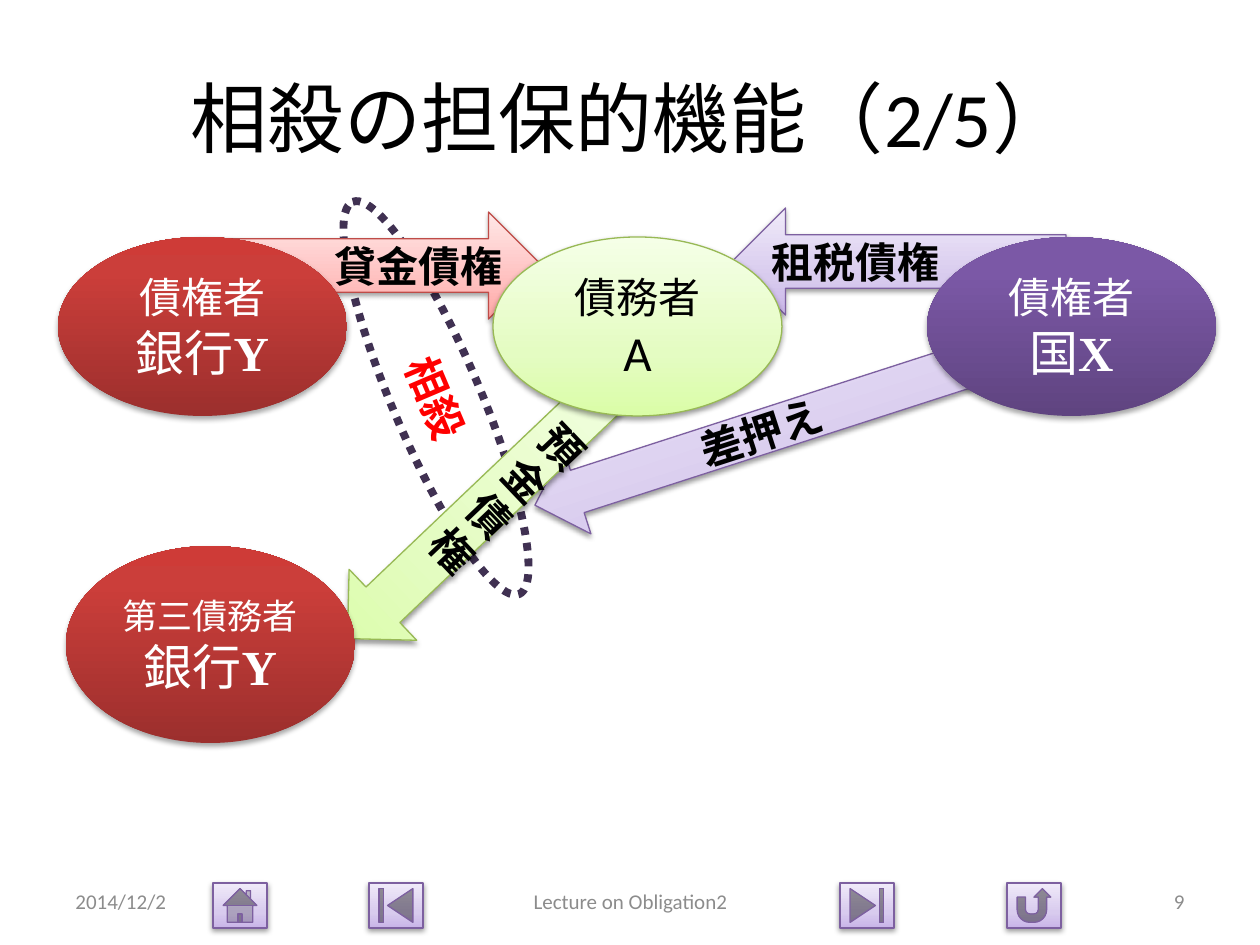
from pptx import Presentation
from pptx import util as u
from pptx.dml.color import RGBColor
from pptx.enum import dml, shapes, text
from pptx.oxml import parse_xml
from pptx.oxml.ns import nsdecls, qn

PX = 914400 / 126
BLACK = RGBColor(0x00, 0x00, 0x00)
WHITE = RGBColor(0xFF, 0xFF, 0xFF)
GREY = RGBColor(0x8C, 0x8C, 0x8C)
RED = RGBColor(0xFF, 0x00, 0x00)
DARK_PURPLE = RGBColor(0x40, 0x31, 0x52)
PURPLE_LINE = RGBColor(0x7D, 0x60, 0xA0)
RED_LINE = RGBColor(0xBF, 0x4C, 0x48)
GREEN_LINE = RGBColor(0x98, 0xB9, 0x55)


def gradient(*stops):
    return [(pos, RGBColor.from_string(color)) for pos, color in stops]


LILAC = gradient((0, "C9B5E8"), (35, "D8CBEE"), (100, "F0EAF9"))
PINK = gradient((0, "FFA6A5"), (35, "FFC0BF"), (100, "FFE7E7"))
GREEN = gradient((0, "DAFDA7"), (35, "E4FCC2"), (100, "F5FFE7"))
CRIMSON = gradient((0, "9C2F2D"), (80, "CB3E3A"), (100, "CE3B37"))
PURPLE = gradient((0, "5F4480"), (80, "7B58A6"), (100, "7C57A8"))

LEFT, CENTER, RIGHT = text.PP_ALIGN.LEFT, text.PP_ALIGN.CENTER, text.PP_ALIGN.RIGHT
KIND = shapes.MSO_SHAPE

prs = Presentation()
prs.slide_width, prs.slide_height = u.Inches(10), u.Inches(7.5)
slide = prs.slides.add_slide(prs.slide_layouts[6])


def add_block(kind, box, stops, line, rotation=0):
    """Add a preset shape with an upward gradient and a soft shadow below it."""
    s = slide.shapes.add_shape(kind, *(round(v * PX) for v in box))
    s.rotation = rotation
    s.shadow.inherit = False
    if line is None:
        s.line.fill.background()
    else:
        s.line.color.rgb = line
        s.line.width = u.Pt(0.75)
    if stops is None:
        s.fill.background()
        return s
    s.fill.gradient()
    spPr = s._element.spPr
    gs = "".join(
        f'<a:gs pos="{pos * 1000}"><a:srgbClr val="{color}"/></a:gs>' for pos, color in stops)
    spPr.replace(spPr.find(qn("a:gradFill")), parse_xml(
        f'<a:gradFill {nsdecls("a")} rotWithShape="1"><a:gsLst>{gs}</a:gsLst>'
        '<a:lin ang="16200000" scaled="0"/></a:gradFill>'))
    alpha, dist = (35, 1.8) if line is None else (38, 1.6)
    spPr.find(qn("a:effectLst")).append(parse_xml(
        f'<a:outerShdw {nsdecls("a")} blurRad="{u.Pt(3.1)}" dist="{u.Pt(dist)}" dir="5400000" '
        f'rotWithShape="0"><a:srgbClr val="{BLACK}"><a:alpha val="{alpha * 1000}"/>'
        '</a:srgbClr></a:outerShdw>'))
    return s


def write(s, lines, color, align=CENTER, bold=False):
    """Fill a shape with (text, size) lines."""
    tf = s.text_frame
    tf.word_wrap = True
    tf.vertical_anchor = text.MSO_ANCHOR.MIDDLE
    for i, (words, size) in enumerate(lines):
        p = tf.add_paragraph() if i else tf.paragraphs[0]
        p.alignment = align
        p.font.name = "Calibri"
        p.font.size = u.Pt(size)
        p.font.bold = bold
        p.font.color.rgb = color
        p.add_run().text = words


# Navigation buttons
for kind, left in ((KIND.ACTION_BUTTON_HOME, 213), (KIND.ACTION_BUTTON_BEGINNING, 369),
                   (KIND.ACTION_BUTTON_END, 840), (KIND.ACTION_BUTTON_RETURN, 1007)):
    add_block(kind, (left, 883, 54, 45), LILAC, PURPLE_LINE)

# Dotted ring around the two claims that are set off
ring = add_block(KIND.OVAL, (223, 354, 426, 88), None, DARK_PURPLE, 67)
ring.line.width = u.Pt(4.5)
ring.line.dash_style = dml.MSO_LINE.ROUND_DOT
write(ring, [("相殺", 24)], RED, bold=True)

# Claims
for kind, box, rotation, stops, line, label, align in (
    (KIND.LEFT_ARROW, (524, 391, 454, 89), 342.1, LILAC, PURPLE_LINE, "差押え", CENTER),
    (KIND.RIGHT_ARROW, (197, 212, 345, 107), 0, PINK, RED_LINE, "貸金債権", RIGHT),
    (KIND.DOWN_ARROW, (444, 299, 98, 402), 46.4, GREEN, GREEN_LINE, "預金債権", CENTER),
    (KIND.LEFT_ARROW, (732, 208, 334, 107), 0, LILAC, PURPLE_LINE, "租税債権", LEFT),
):
    arrow = add_block(kind, box, stops, line, rotation)
    write(arrow, [(label, 24)], BLACK, align, bold=True)

# Title and footer
for box, words, size, color, align in (
    ((63, 38, 1134, 158), "相殺の担保的機能（2/5）", 44, BLACK, CENTER),
    ((63, 876, 294, 50), "2014/12/2", 12, GREY, LEFT),
    ((431, 876, 399, 50), "Lecture on Obligation2", 12, GREY, CENTER),
    ((903, 876, 294, 50), "9", 12, GREY, RIGHT),
):
    s = slide.shapes.add_textbox(*(round(v * PX) for v in box))
    write(s, [(words, size)], color, align)

# Parties
for left, top, height, stops, line, color, role, size, name, letter in (
    (58, 237, 179, CRIMSON, None, WHITE, "債権者", 24, "銀行", "Y"),
    (493, 237, 179, GREEN, GREEN_LINE, BLACK, "債務者", 24, "A", ""),
    (927, 237, 179, PURPLE, None, WHITE, "債権者", 24, "国", "X"),
    (66, 546, 197, CRIMSON, None, WHITE, "第三債務者", 20, "銀行", "Y"),
):
    party = add_block(KIND.OVAL, (left, top, 289, height), stops, line)
    write(party, [(role, size), (name, 28)], color)
    if letter:
        r = party.text_frame.paragraphs[1].add_run()
        r.text = letter
        r.font.name = "Times New Roman"
        r.font.bold = True

prs.save("out.pptx")
